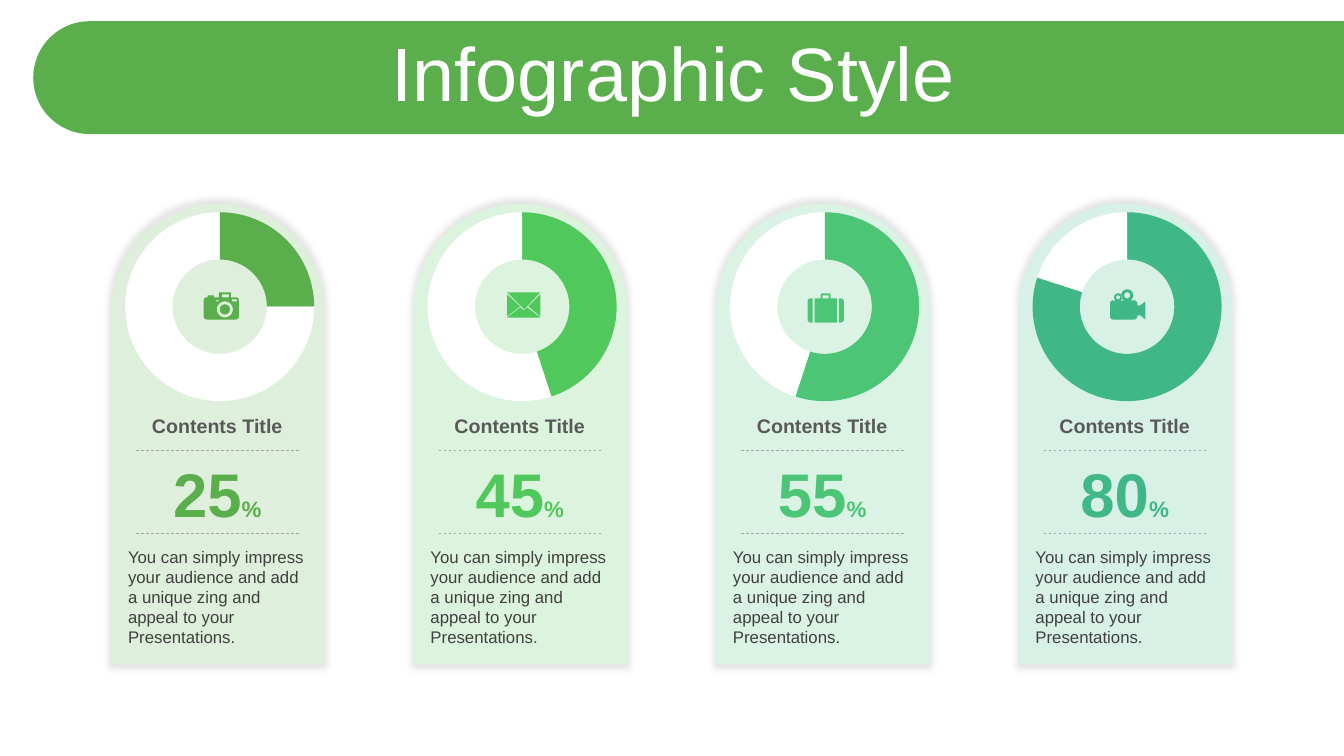
import math
from lxml import etree
from pptx import Presentation
from pptx.chart import data as chart_data
from pptx.dml.color import RGBColor
from pptx.enum import chart as chart_enum, dml, shapes, text
from pptx.oxml import parse_xml
from pptx.oxml.ns import nsdecls, qn
from pptx.util import Inches, Pt

WHITE = RGBColor(0xFF, 0xFF, 0xFF)
BLACK = RGBColor(0, 0, 0)
BANNER_GREEN = RGBColor(0x5A, 0xAE, 0x4C)
HEADING_GRAY = RGBColor(0x59, 0x59, 0x59)
BODY_GRAY = RGBColor(0x40, 0x40, 0x40)
RULE_GRAY = RGBColor(0xA6, 0xA6, 0xA6)
FONT = "Arial"
BODY = "You can simply impress your audience and add a unique zing and appeal to your Presentations."
LAYOUT = {"x": 0.038, "y": 0.028, "w": 0.976, "h": 0.942}


def arc(x, y, radius, start, end):
    steps = max(4, (end - start) // 15)
    angles = [math.radians(start + (end - start) * i / steps) for i in range(steps + 1)]
    return [(x + radius * math.cos(a), y + radius * math.sin(a)) for a in angles]


def add_text(parent, box, runs, color, alignment, bold=False):
    shape = parent.add_textbox(*[Inches(value) for value in box])
    shape.text_frame.word_wrap = True
    paragraph = shape.text_frame.paragraphs[0]
    paragraph.alignment = alignment
    paragraph.font.name = FONT
    paragraph.font.bold = bold
    paragraph.font.color.rgb = color
    paragraph.font.size = Pt(runs[0][1])
    for words, size in runs:
        run = paragraph.add_run()
        run.text = words
        if len(runs) > 1:
            run.font.size = Pt(size)
    return shape


camera = [
    arc(1.13, 3.07, 0.05, 0, 360),
    arc(1.13, 3.07, 0.08, 0, 360),
    [(1.04, 2.98), (1.07, 2.98), (1.07, 2.99), (1.04, 2.99)],
    [(1.2, 2.97), (1.25, 2.97), (1.25, 2.99), (1.2, 2.99)],
    [(1.1, 2.92), (1.17, 2.92), (1.17, 2.95), (1.1, 2.95)],
    [(1.07, 2.95), (1.07, 2.9), (1.19, 2.9), (1.19, 2.95),
     *arc(1.24, 2.98, 0.03, 270, 360), *arc(1.24, 3.14, 0.03, 0, 90),
     *arc(0.95, 3.14, 0.03, 90, 180), *arc(0.95, 2.98, 0.03, 180, 270),
     (0.96, 2.95), (0.96, 2.93), (1.02, 2.93), (1.02, 2.95)],
]
envelope = [
    [(1.13, 3.05), (1.26, 3.15), (0.93, 3.15), (1.06, 3.05), (1.1, 3.08)],
    [(1.26, 2.92), (1.26, 3.14), (1.14, 3.04)],
    [(0.93, 2.92), (1.06, 3.04), (0.93, 3.14)],
    [(0.93, 2.9), (1.26, 2.9), (1.1, 3.07)],
]
suitcase = [
    [(1.22, 2.96), *arc(1.24, 2.99, 0.03, 270, 360), *arc(1.24, 3.17, 0.03, 0, 90), (1.22, 3.2)],
    [(0.96, 2.96), (0.96, 3.2), *arc(0.94, 3.17, 0.03, 90, 180), *arc(0.94, 2.99, 0.03, 180, 270)],
    [(1.06, 2.93), (1.06, 2.96), (1.12, 2.96), (1.12, 2.93)],
    [*arc(1.06, 2.93, 0.02, 180, 270), *arc(1.12, 2.93, 0.02, 270, 360), (1.14, 2.96),
     (1.2, 2.96), (1.2, 3.2), (0.98, 3.2), (0.98, 2.96), (1.04, 2.96)],
]
video_camera = [
    arc(0.99, 2.95, 0.02, 0, 360),
    arc(1.08, 2.93, 0.03, 0, 360),
    [*arc(1.08, 2.93, 0.06, 120, 420), *arc(1.15, 3.01, 0.03, 270, 360),
     (1.18, 3.03), (1.21, 3.03), (1.26, 2.99), (1.26, 3.17), (1.21, 3.13), (1.18, 3.13),
     *arc(1.15, 3.14, 0.03, 0, 90), *arc(0.94, 3.14, 0.03, 90, 180),
     *arc(0.94, 3.01, 0.03, 180, 270), *arc(0.99, 2.95, 0.04, 120, 420), (1.06, 2.98)],
]
cards = [
    (25, BANNER_GREEN, RGBColor(0xDE, 0xEF, 0xDB), camera),
    (45, RGBColor(0x50, 0xC8, 0x5B), RGBColor(0xDC, 0xF4, 0xDE), envelope),
    (55, RGBColor(0x4C, 0xC5, 0x76), RGBColor(0xDB, 0xF3, 0xE4), suitcase),
    (80, RGBColor(0x40, 0xB7, 0x86), RGBColor(0xD8, 0xF1, 0xE7), video_camera),
]

presentation = Presentation()
presentation.slide_width = Inches(13.33)
presentation.slide_height = Inches(7.5)
slide = presentation.slides.add_slide(presentation.slide_layouts[6])

banner = slide.shapes.add_shape(
    shapes.MSO_SHAPE.ROUND_2_SAME_RECTANGLE, Inches(6.27), Inches(-5.73), Inches(1.12), Inches(13))
banner.adjustments[0] = 0.5
banner.rotation = 270
banner.shadow.inherit = False
banner.fill.solid()
banner.fill.fore_color.rgb = BANNER_GREEN
banner.line.fill.background()

title = add_text(slide.shapes, (0.35, 0.37, 12.66, 0.79), [("Infographic Style", 54)],
                 WHITE, text.PP_ALIGN.CENTER)
title.text_frame.vertical_anchor = text.MSO_ANCHOR.MIDDLE
title.text_frame.paragraphs[0].line_spacing = 0.9
title.text_frame.paragraphs[0].space_before = Pt(10)

for index, (percent, accent, tint, icon) in enumerate(cards):
    left = 1.1 + 3 * index
    group = slide.shapes.add_group_shape()

    panel = group.shapes.add_shape(
        shapes.MSO_SHAPE.ROUND_2_SAME_RECTANGLE, Inches(left), Inches(2.02), Inches(2.12), Inches(4.57))
    panel.adjustments[0] = 0.5
    panel.fill.solid()
    panel.fill.fore_color.rgb = tint
    panel.line.fill.background()
    panel.shadow.inherit = False
    panel.element.spPr.find(qn("a:effectLst")).append(parse_xml(
        f'<a:outerShdw {nsdecls("a")} blurRad="63500" sx="102000" sy="102000" algn="ctr" rotWithShape="0">'
        '<a:srgbClr val="000000"><a:alpha val="11000"/></a:srgbClr></a:outerShdw>'))

    heading = add_text(group.shapes, (left + 0.19, 4.06, 1.73, 0.34), [("Contents Title", 14)],
                       HEADING_GRAY, text.PP_ALIGN.CENTER, True)
    figure = add_text(group.shapes, (left + 0.19, 4.47, 1.73, 0.84), [(str(percent), 44), ("%", 16)],
                      accent, text.PP_ALIGN.CENTER, True)
    body = add_text(group.shapes, (left + 0.05, 5.37, 2.03, 1.11), [(BODY, 12)],
                    BODY_GRAY, text.PP_ALIGN.LEFT)
    body.text_frame.margin_left = body.text_frame.margin_right = Inches(0.12)
    for label in (heading, figure, body):
        label.text_frame.auto_size = text.MSO_AUTO_SIZE.SHAPE_TO_FIT_TEXT

    for rule_top in (4.47, 5.29):
        rule = group.shapes.add_connector(
            shapes.MSO_CONNECTOR.STRAIGHT, Inches(left + 0.25), Inches(rule_top),
            Inches(left + 1.87), Inches(rule_top))
        rule.line.color.rgb = RULE_GRAY
        rule.line.width = Pt(0.5)
        rule.line.dash_style = dml.MSO_LINE.DASH
        etree.SubElement(rule.element.spPr, qn("a:effectLst"))

    values = chart_data.CategoryChartData()
    values.categories = ["1", "2"]
    values.add_series("Series 1", (percent, 100 - percent))
    chart = group.shapes.add_chart(
        chart_enum.XL_CHART_TYPE.DOUGHNUT, Inches(left + 0.05), Inches(2.05),
        Inches(2.01), Inches(1.99), values).chart
    chart.has_title = False
    chart.has_legend = False
    chart.font.name = FONT
    chart.font.size = Pt(18)
    chart.font.color.rgb = BLACK
    chart.plots[0].vary_by_categories = True
    for position, color in enumerate((accent, WHITE)):
        point = chart.plots[0].series[0].points[position]
        point.format.fill.solid()
        point.format.fill.fore_color.rgb = color
        point.format.line.fill.background()
    plot_area = chart.element.find(".//" + qn("c:plotArea"))
    plot_area.find(".//" + qn("c:holeSize")).set("val", "55")
    for default_layout in plot_area.findall(qn("c:layout")):
        plot_area.remove(default_layout)
    modes = '<c:layoutTarget val="inner"/><c:xMode val="edge"/><c:yMode val="edge"/>'
    sizes = "".join(f'<c:{key} val="{value}"/>' for key, value in LAYOUT.items())
    plot_area.insert(0, parse_xml(
        f'<c:layout {nsdecls("c")}><c:manualLayout>{modes}{sizes}</c:manualLayout></c:layout>'))

    contours = [[(Inches(left + x), Inches(y)) for x, y in contour] for contour in icon]
    builder = slide.shapes.build_freeform(*contours[0][0])
    for number, contour in enumerate(contours):
        if number:
            builder.move_to(*contour[0])
        builder.add_line_segments(contour[1:], close=True)
    symbol = builder.convert_to_shape()
    symbol.shadow.inherit = False
    symbol.fill.solid()
    symbol.fill.fore_color.rgb = accent
    symbol.line.fill.background()

presentation.save("out.pptx")
